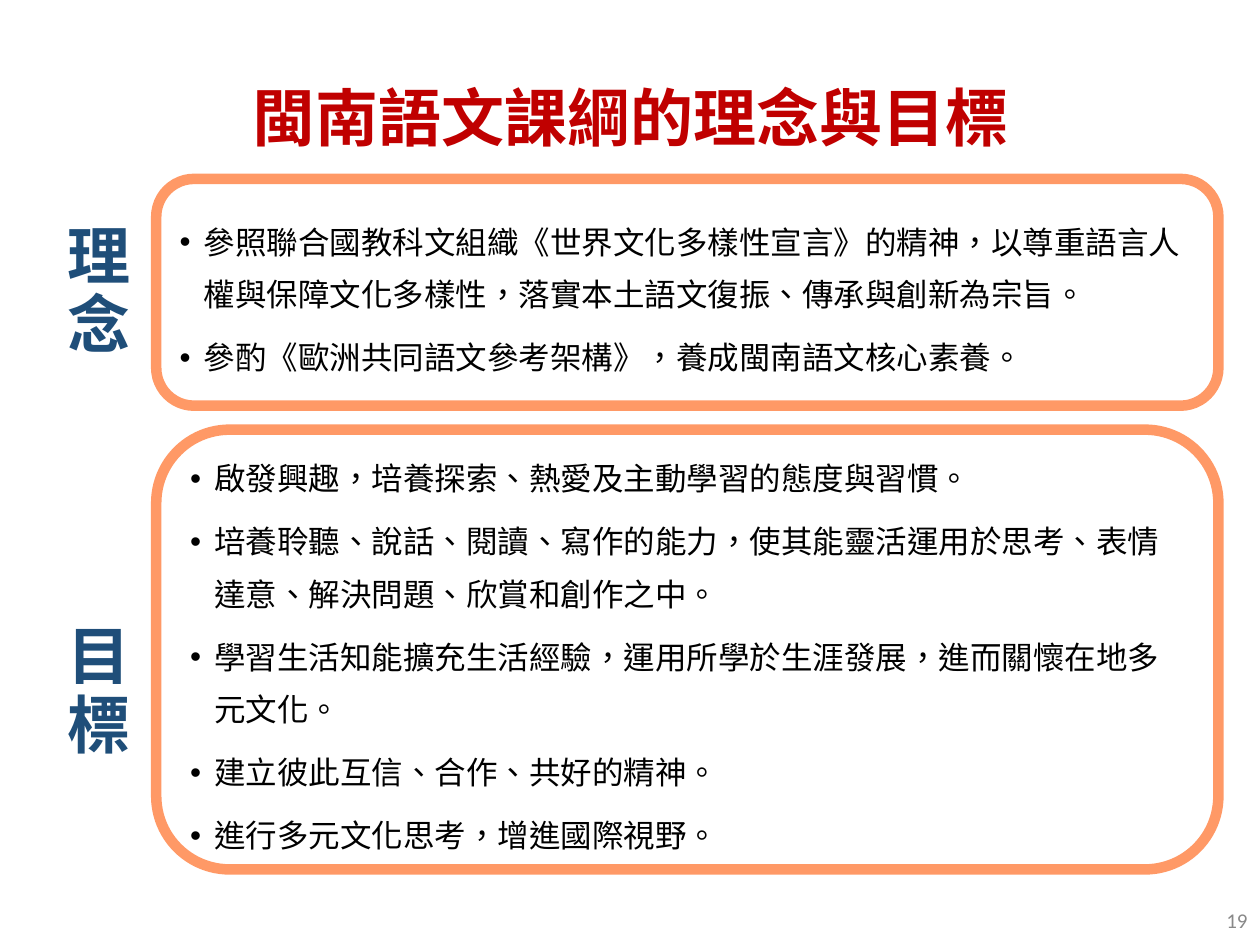
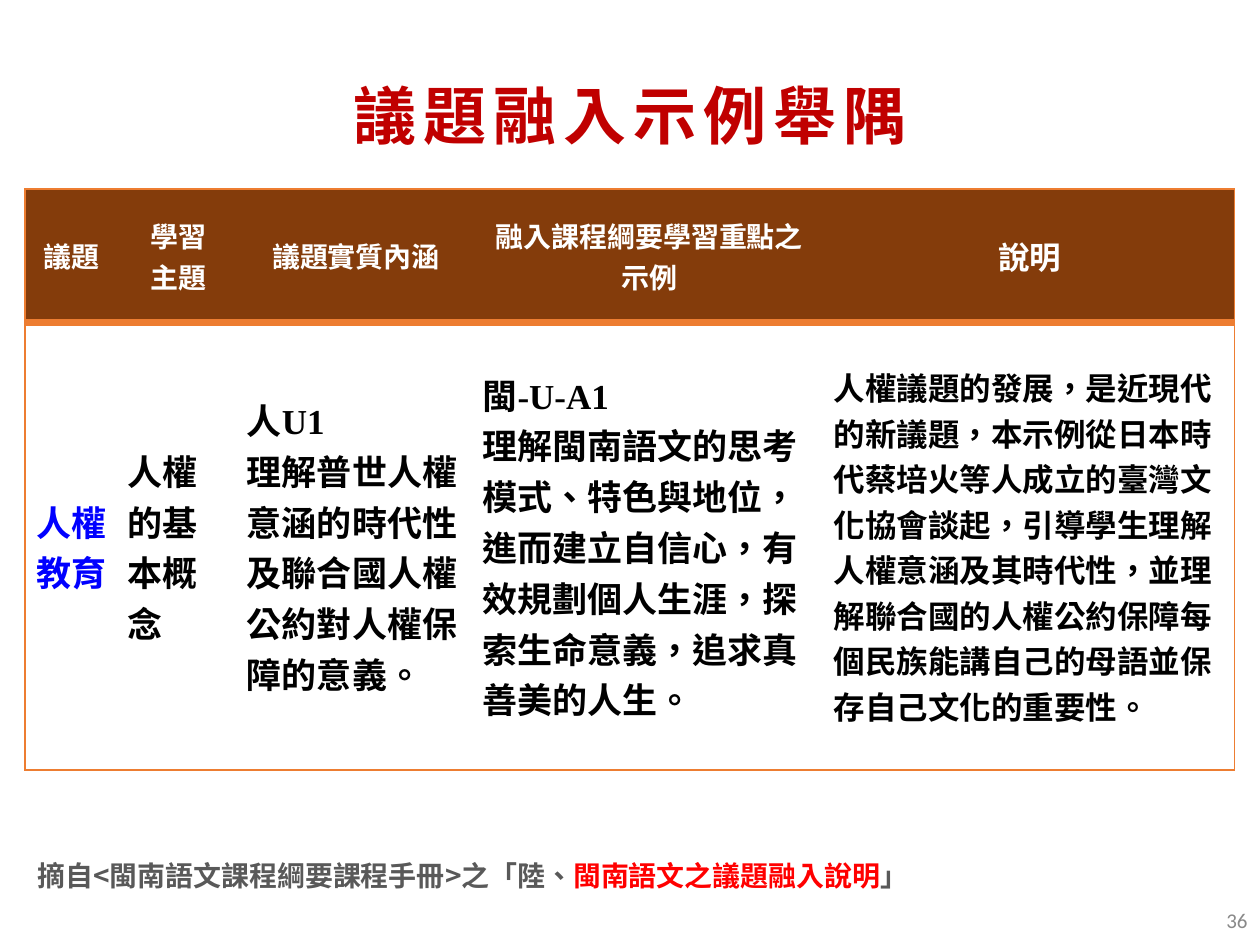
from lxml import etree
from pptx import Presentation
from pptx.dml.color import RGBColor
from pptx.enum.shapes import MSO_SHAPE
from pptx.enum.text import MSO_ANCHOR, PP_ALIGN
from pptx.oxml.ns import qn
from pptx.util import Pt

PANEL = MSO_SHAPE.FLOWCHART_ALTERNATE_PROCESS
TOP, MIDDLE = MSO_ANCHOR.TOP, MSO_ANCHOR.MIDDLE
LEFT, CENTER, RIGHT = PP_ALIGN.LEFT, PP_ALIGN.CENTER, PP_ALIGN.RIGHT

SCALE = 9144
WIDE, HIGH = 1000, 750
SANS, SERIF, PLAIN = "Noto Sans CJK SC", "Times New Roman", "Calibri"
WHITE, BLACK, GRAY, SLATE = "FFFFFF", "000000", "898989", "595959"
CRIMSON, RED, BLUE, NAVY = "C00000", "FF0000", "0000FF", "1F4E79"
PEACH, ORANGE, BROWN = "FF9966", "ED7D31", "843C0B"
NO_STYLE = "{2D5ABB26-0587-4C30-8999-92F81FD0307C}"

IDEAS = [
    "參照聯合國教科文組織《世界文化多樣性宣言》的精神，以尊重語言人權與保障文化多樣性，落實本土語文復振、傳承與創新為宗旨。",
    "參酌《歐洲共同語文參考架構》，養成閩南語文核心素養。",
]
GOALS = [
    "啟發興趣，培養探索、熱愛及主動學習的態度與習慣。",
    "培養聆聽、說話、閱讀、寫作的能力，使其能靈活運用於思考、表情達意、解決問題、欣賞和創作之中。",
    "學習生活知能擴充生活經驗，運用所學於生涯發展，進而關懷在地多元文化。",
    "建立彼此互信、合作、共好的精神。",
    "進行多元文化思考，增進國際視野。",
]
HEADS = [["議題"], ["學習", "主題"], ["議題實質內涵"], ["融入課程綱要學習重點之示例"], ["說明"]]
FACTS = [
    ["人權教育"],
    ["人權的基本概念"],
    ["人U1", "理解普世人權意涵的時代性及聯合國人權", "公約對人權保障的意義。"],
    ["閩-U-A1", "理解閩南語文的思考模式、特色與地位，進而建立自信心，有效規劃個人生涯，探索生命意義，追求真善美的人生。"],
    ["人權議題的發展，是近現代的新議題，本示例從日本時代蔡培火等人成立的臺灣文化協會談起，引導學生理解人權意涵及其時代性，並理解聯合國的人權公約保障每個民族能講自己的母語並保存自己文化的重要性。"],
]
SOURCE = [
    ("摘自<閩南語文課程綱要課程手冊>之「陸、", SLATE),
    ("閩南語文之議題融入說明", RED),
    ("」", SLATE),
]


def px(size):
    return int(size * SCALE)


def tint(code):
    return RGBColor.from_string(code)


def add_run(para, text, size, color, bold=False, face=SANS, track=0):
    run = para.add_run()
    run.text = text
    font = run.font
    font.size, font.bold, font.name = Pt(size), bold, face
    font.color.rgb = tint(color)
    props = run._r.get_or_add_rPr()
    props.set("lang", "zh-TW")
    if track:
        props.set("spc", str(track * 100))
    east = etree.Element(qn("a:ea"), typeface=SANS)
    props.find(qn("a:latin")).addnext(east)


def add_paras(frame, lines, align, **look):
    for num, line in enumerate(lines):
        para = frame.paragraphs[0] if num == 0 else frame.add_paragraph()
        para.alignment = align
        add_run(para, line, **look)


def add_box(slide, box, anchor=MIDDLE, side=10, edge=5):
    frame = slide.shapes.add_textbox(*map(px, box)).text_frame
    frame.word_wrap = True
    frame.vertical_anchor = anchor
    frame.margin_left = frame.margin_right = px(side)
    frame.margin_top = frame.margin_bottom = px(edge)
    return frame


def add_title(slide, box, text, track=0):
    add_paras(add_box(slide, box), [text], CENTER,
              size=36, color=CRIMSON, bold=True, track=track)


def add_number(slide, text):
    box = (WIDE - 225, HIGH - 40, 225, 40)
    add_paras(add_box(slide, box), [text], RIGHT,
              size=12, color=GRAY, face=PLAIN)


def add_label(slide, box, text):
    frame = add_box(slide, box, side=15, edge=7)
    add_paras(frame, [text], CENTER, size=36, color=NAVY, bold=True)
    frame.paragraphs[0].line_spacing = 0.9


def add_panel(slide, box, items):
    panel = slide.shapes.add_shape(PANEL, *map(px, box))
    panel.shadow.inherit = False
    panel.fill.solid()
    panel.fill.fore_color.rgb = tint(WHITE)
    panel.line.color.rgb = tint(PEACH)
    panel.line.width = Pt(6)
    frame = panel.text_frame
    frame.word_wrap = True
    frame.vertical_anchor = MIDDLE
    add_paras(frame, items, LEFT, size=18, color=BLACK)
    for num, para in enumerate(frame.paragraphs):
        props = para._p.get_or_add_pPr()
        props.set("marL", str(px(19)))
        props.set("indent", str(px(-19)))
        etree.SubElement(props, qn("a:buFont"), typeface="Arial")
        etree.SubElement(props, qn("a:buChar"), char="•")
        para.line_spacing = Pt(30)
        if num:
            para.space_before = Pt(6)


def add_edge(cell, side, width):
    props = cell._tc.get_or_add_tcPr()
    line = etree.SubElement(props, qn("a:ln" + side), w=str(Pt(width)))
    fill = etree.SubElement(line, qn("a:solidFill"))
    etree.SubElement(fill, qn("a:srgbClr"), val=ORANGE)


def fill_cell(cell, lines, back, edges, align, **look):
    for side, width in edges:
        add_edge(cell, side, width)
    cell.fill.solid()
    cell.fill.fore_color.rgb = tint(back)
    cell.vertical_anchor = MIDDLE
    cell.margin_left = cell.margin_right = px(7)
    cell.margin_top = cell.margin_bottom = 0
    add_paras(cell.text_frame, lines, align, bold=True, **look)


def add_grid(slide, box):
    wides, highs = [74, 95, 187, 279, 325], [106, 355]
    grid = slide.shapes.add_table(2, len(wides), *map(px, box)).table
    grid._tbl.tblPr[0].text = NO_STYLE
    for col, wide in zip(grid.columns, wides):
        col.width = px(wide)
    for row, high in zip(grid.rows, highs):
        row.height = px(high)
    last = len(wides) - 1
    for num, (head, fact) in enumerate(zip(HEADS, FACTS)):
        ends = [("L", 1)] if num == 0 else [("R", 1)] if num == last else []
        fill_cell(grid.cell(0, num), head, BROWN, ends + [("T", 1), ("B", 4)],
                  CENTER, size=18 if num == last else 16, color=WHITE)
        fill_cell(grid.cell(1, num), fact, WHITE, ends + [("T", 4), ("B", 1)],
                  LEFT if num else CENTER, size=18 if num == last else 20,
                  color=BLACK if num else BLUE, face=SERIF if num else SANS)


def add_source(slide, box):
    para = add_box(slide, box, TOP).paragraphs[0]
    para.line_spacing = 0.8
    for text, color in SOURCE:
        add_run(para, text, 16, color, bold=True)


def build_aims(slide):
    add_panel(slide, (124, 341, 843, 349), GOALS)
    add_panel(slide, (124, 142, 843, 180), IDEAS)
    add_title(slide, (69, 20, 862, 145), "閩南語文課綱的理念與目標")
    add_label(slide, (33, 161, 91, 143), "理念")
    add_label(slide, (33, 479, 91, 143), "目標")
    add_number(slide, "19")


def build_case(slide):
    add_title(slide, (69, 48, 862, 86), "議題融入示例舉隅", track=4)
    add_grid(slide, (20, 150, 960, 461))
    add_source(slide, (20, 682, 727, 37))
    add_number(slide, "36")


def main():
    deck = Presentation()
    deck.slide_width, deck.slide_height = px(WIDE), px(HIGH)
    for build in (build_aims, build_case):
        build(deck.slides.add_slide(deck.slide_layouts[6]))
    deck.save("out.pptx")


if __name__ == "__main__":
    main()
